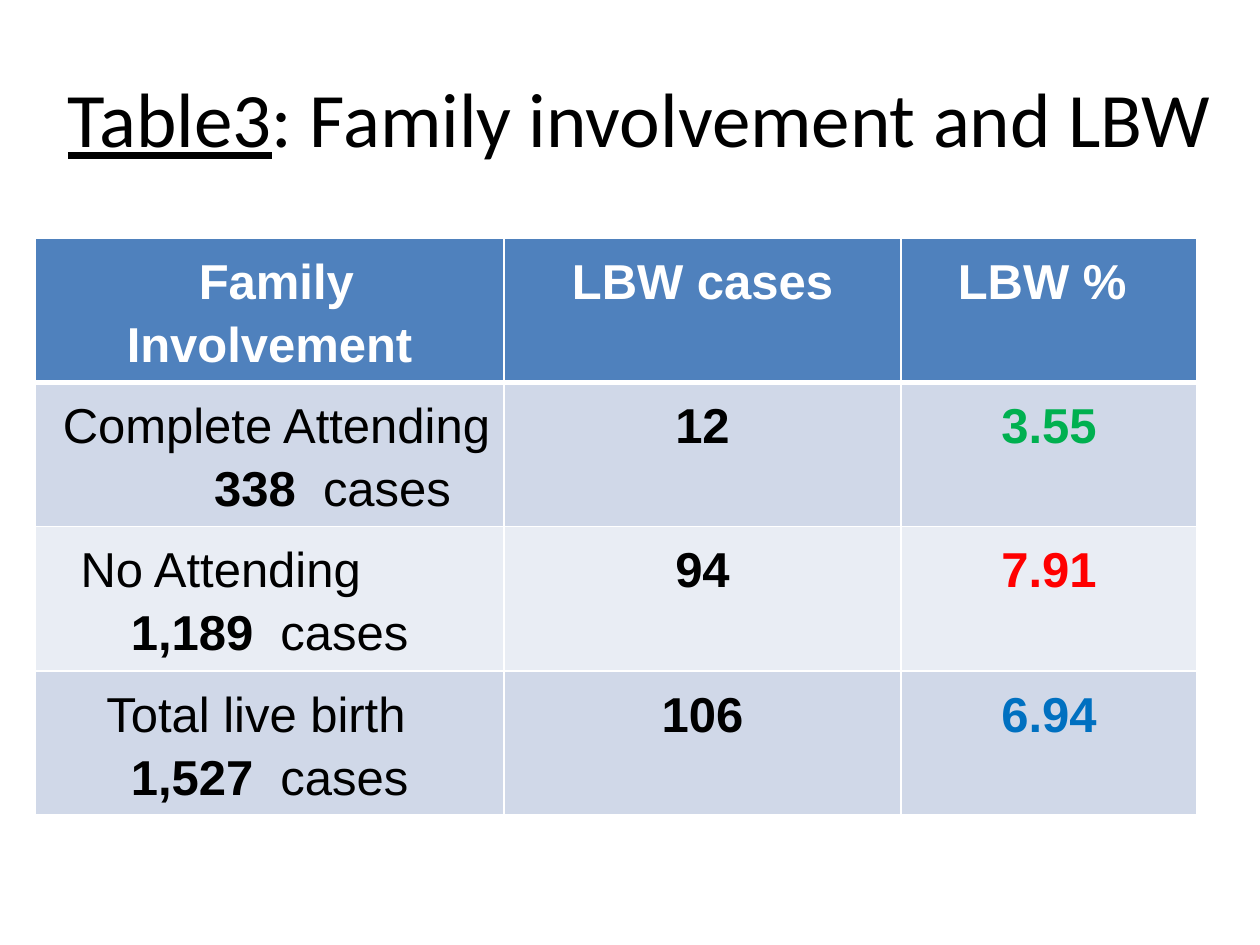
from lxml.etree import SubElement
from pptx import Presentation
from pptx.dml.color import RGBColor
from pptx.enum.text import MSO_ANCHOR, PP_ALIGN
from pptx.oxml.ns import qn
from pptx.util import Pt

EMU_PER_PX = 914400 // 126
WHITE = RGBColor(0xFF, 0xFF, 0xFF)
BLACK = RGBColor(0x00, 0x00, 0x00)
HEADER_BLUE = RGBColor(0x4F, 0x81, 0xBD)
BAND_DARK = RGBColor(0xD0, 0xD8, 0xE8)
BAND_LIGHT = RGBColor(0xE9, 0xED, 0xF4)
GREEN = RGBColor(0x00, 0xB0, 0x50)
RED = RGBColor(0xFF, 0x00, 0x00)
BLUE = RGBColor(0x00, 0x70, 0xC0)

HEADERS = [" Family Involvement", "LBW cases", "LBW % "]
ROWS = [
    ([[(" Complete Attending \t", False), ("338", True), ("  cases", False)]], "12", "3.55", GREEN),
    ([[("No Attending\t", False), ("1,189", True), ("  cases", False)]], "94", "7.91", RED),
    ([[("Total live birth  ", False)], [("1,527  ", True), ("cases", False)]], "106", "6.94", BLUE),
]
COLUMN_WIDTHS = [469, 397, 296]
ROW_HEIGHT = 143


def px(length):
    return length * EMU_PER_PX


class SlideBuilder:
    title_font, title_size = "Calibri", 44
    table_font, table_size = "Arial", 28
    cell_margin = 9
    tab_width = 126
    line_spacing = 1.15

    def __init__(self, presentation):
        self.slide = presentation.slides.add_slide(presentation.slide_layouts[6])

    def add_run(self, paragraph, text, font, size, color, bold=False, underline=False):
        run = paragraph.add_run()
        run.text = text
        run.font.name = font
        run.font.size = Pt(size)
        run.font.color.rgb = color
        run.font.bold = bold
        run.font.underline = underline

    def add_title(self, left, top, width, height, parts):
        shape = self.slide.shapes.add_textbox(px(left), px(top), px(width), px(height))
        text_frame = shape.text_frame
        text_frame.word_wrap = True
        text_frame.vertical_anchor = MSO_ANCHOR.MIDDLE
        paragraph = text_frame.paragraphs[0]
        paragraph.alignment = PP_ALIGN.CENTER
        for text, underline in parts:
            self.add_run(paragraph, text, self.title_font, self.title_size, BLACK, underline=underline)

    def add_table(self, left, top, widths, row_count, row_height):
        frame = self.slide.shapes.add_table(
            row_count, len(widths), px(left), px(top), px(sum(widths)), px(row_height * row_count)
        )
        table = frame.table
        for column, width in zip(table.columns, widths):
            column.width = px(width)
        for row in table.rows:
            row.height = px(row_height)
        return table

    def add_border(self, cell, side, points):
        line = SubElement(cell._tc.get_or_add_tcPr(), qn(f"a:ln{side}"), w=str(Pt(points)))
        fill = SubElement(line, qn("a:solidFill"))
        SubElement(fill, qn("a:srgbClr"), val=str(WHITE))

    def fill_cell(self, cell, paragraphs, fill, color, top_border=1, bottom_border=1):
        for side, points in (("L", 1), ("R", 1), ("T", top_border), ("B", bottom_border)):
            self.add_border(cell, side, points)
        cell.fill.solid()
        cell.fill.fore_color.rgb = fill
        cell.margin_left = cell.margin_right = cell.margin_top = px(self.cell_margin)
        cell.margin_bottom = 0
        text_frame = cell.text_frame
        for index, runs in enumerate(paragraphs):
            paragraph = text_frame.add_paragraph() if index else text_frame.paragraphs[0]
            paragraph.alignment = PP_ALIGN.CENTER
            paragraph.line_spacing = self.line_spacing
            paragraph._p.get_or_add_pPr().set("defTabSz", str(px(self.tab_width)))
            for text, bold in runs:
                self.add_run(paragraph, text, self.table_font, self.table_size, color, bold)


def main():
    presentation = Presentation()
    presentation.slide_width = px(1260)
    presentation.slide_height = px(945)
    builder = SlideBuilder(presentation)
    builder.add_title(44, 38, 1191, 158, [("Table3", True), (": Family involvement and LBW", False)])

    table = builder.add_table(35, 238, COLUMN_WIDTHS, len(ROWS) + 1, ROW_HEIGHT)
    for column, header in enumerate(HEADERS):
        builder.fill_cell(table.cell(0, column), [[(header, True)]], HEADER_BLUE, WHITE, bottom_border=3)
    for row, (group, cases, percent, percent_color) in enumerate(ROWS, start=1):
        fill = BAND_DARK if row % 2 else BAND_LIGHT
        top_border = 3 if row == 1 else 1
        contents = [(group, BLACK), ([[(cases, True)]], BLACK), ([[(percent, True)]], percent_color)]
        for column, (paragraphs, color) in enumerate(contents):
            builder.fill_cell(table.cell(row, column), paragraphs, fill, color, top_border=top_border)

    presentation.save("out.pptx")


if __name__ == "__main__":
    main()
